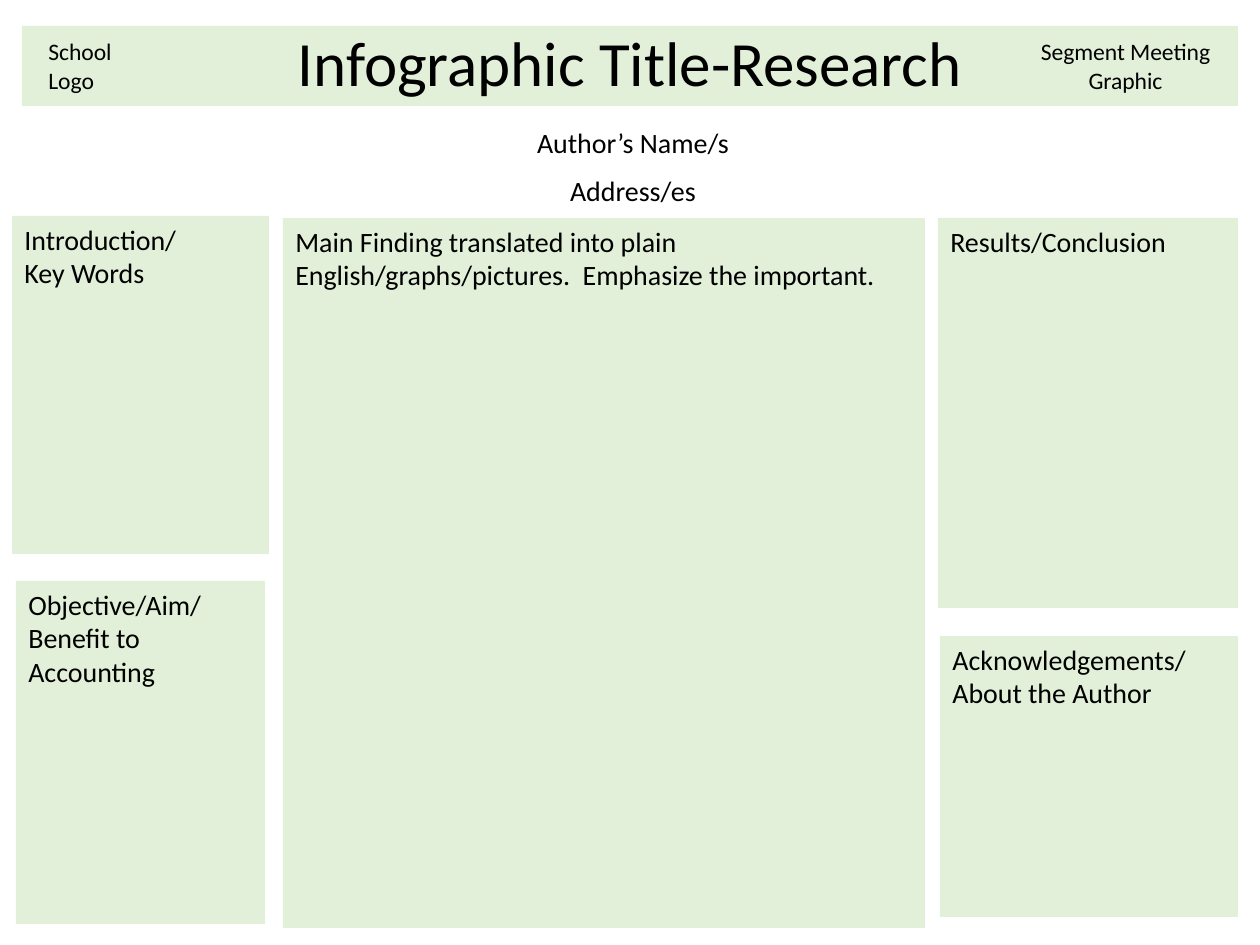
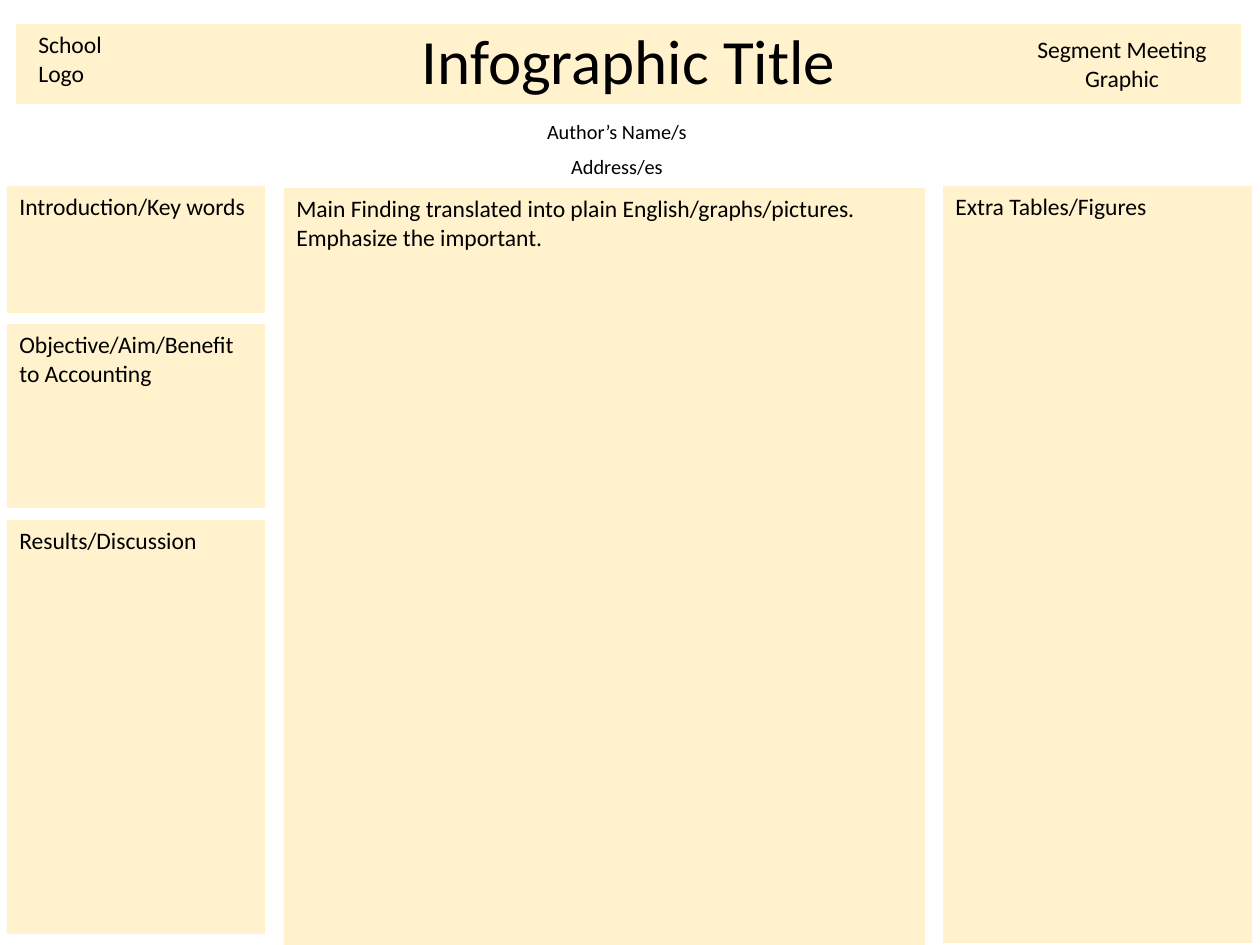
from pptx import Presentation
from pptx.dml.color import RGBColor
from pptx.enum.shapes import MSO_SHAPE as Shape
from pptx.enum.text import MSO_ANCHOR as Anchor, MSO_AUTO_SIZE as AutoSize, PP_ALIGN as Align
from pptx.util import Emu, Pt

FONT = "Calibri"
INK = "000000"
GREEN = "E2F0D9"
YELLOW = "FFF2CC"
TITLE_SIZE = 36
CORNER_SIZE = 13.5
BYLINE = "Author’s Name/s\nAddress/es"
FINDING = "Main Finding translated into plain English/graphs/pictures.  Emphasize the important."
hex_color = RGBColor.from_string


def px(*lengths):
    return [Emu(round(length * 914400 / 126)) for length in lengths]


def fill_in(box, text, size, align=Align.LEFT, anchor=Anchor.TOP, spacing=1.0, before=0, fill=None):
    if fill:
        box.fill.solid()
        box.fill.fore_color.rgb = hex_color(fill)
        box.line.fill.background()
    frame = box.text_frame
    frame.text = text
    frame.word_wrap = True
    frame.auto_size = AutoSize.NONE
    frame.vertical_anchor = anchor
    for paragraph in frame.paragraphs:
        paragraph.alignment = align
        paragraph.line_spacing = spacing
        paragraph.space_before = Pt(before)
        for run in paragraph.runs:
            run.font.name = FONT
            run.font.size = Pt(size)
            run.font.color.rgb = hex_color(INK)


posters = [
    {
        "title": "Infographic Title-Research",
        "color": GREEN,
        "banner": (22, 26, 1216, 80),
        "byline": (16, 123, 1234, 67),
        "byline_size": 16,
        "byline_spacing": 0.9,
        "school": (36, 31, 116, 71),
        "segment": (1028, 31, 195, 71),
        "panel_size": 16,
        "panels": [
            ("Introduction/\vKey Words", 12, 216, 257, 338),
            ("Objective/Aim/\vBenefit to Accounting", 16, 581, 249, 343),
            ("Results/Conclusion", 938, 218, 300, 390),
            ("Acknowledgements/\vAbout the Author", 940, 636, 298, 281),
            (FINDING, 283, 218, 642, 710),
        ],
    },
    {
        "title": "Infographic Title",
        "color": YELLOW,
        "banner": (16, 24, 1225, 80),
        "byline": (0, 120, 1234, 67),
        "byline_size": 11.6,
        "byline_spacing": 0.7,
        "school": (26, 24, 97, 71),
        "segment": (1023, 29, 198, 71),
        "panel_size": 13.5,
        "panels": [
            ("Introduction/Key words", 7, 186, 258, 127),
            ("Objective/Aim/Benefit to Accounting", 7, 324, 258, 184),
            ("Results/Discussion", 7, 520, 258, 414),
            ("Extra Tables/Figures", 943, 186, 309, 757),
            (FINDING, 284, 188, 641, 757),
        ],
    },
]

deck = Presentation()
deck.slide_width, deck.slide_height = px(1260, 945)
title_only = deck.slide_layouts[5]

for poster in posters:
    slide = deck.slides.add_slide(title_only)
    shapes = slide.shapes

    banner = shapes.title
    banner.left, banner.top, banner.width, banner.height = px(*poster["banner"])
    fill_in(banner, poster["title"], TITLE_SIZE, Align.CENTER, Anchor.MIDDLE, 0.9, fill=poster["color"])

    byline = shapes.add_textbox(*px(*poster["byline"]))
    fill_in(byline, BYLINE, poster["byline_size"], Align.CENTER,
            spacing=poster["byline_spacing"], before=10)

    school = shapes.add_textbox(*px(*poster["school"]))
    fill_in(school, "School Logo", CORNER_SIZE)

    for heading, *bounds in poster["panels"]:
        panel = shapes.add_shape(Shape.RECTANGLE, *px(*bounds))
        panel.shadow.inherit = False
        fill_in(panel, heading, poster["panel_size"], fill=poster["color"])

    segment = shapes.add_textbox(*px(*poster["segment"]))
    fill_in(segment, "Segment Meeting Graphic", CORNER_SIZE, Align.CENTER)

deck.save("out.pptx")
